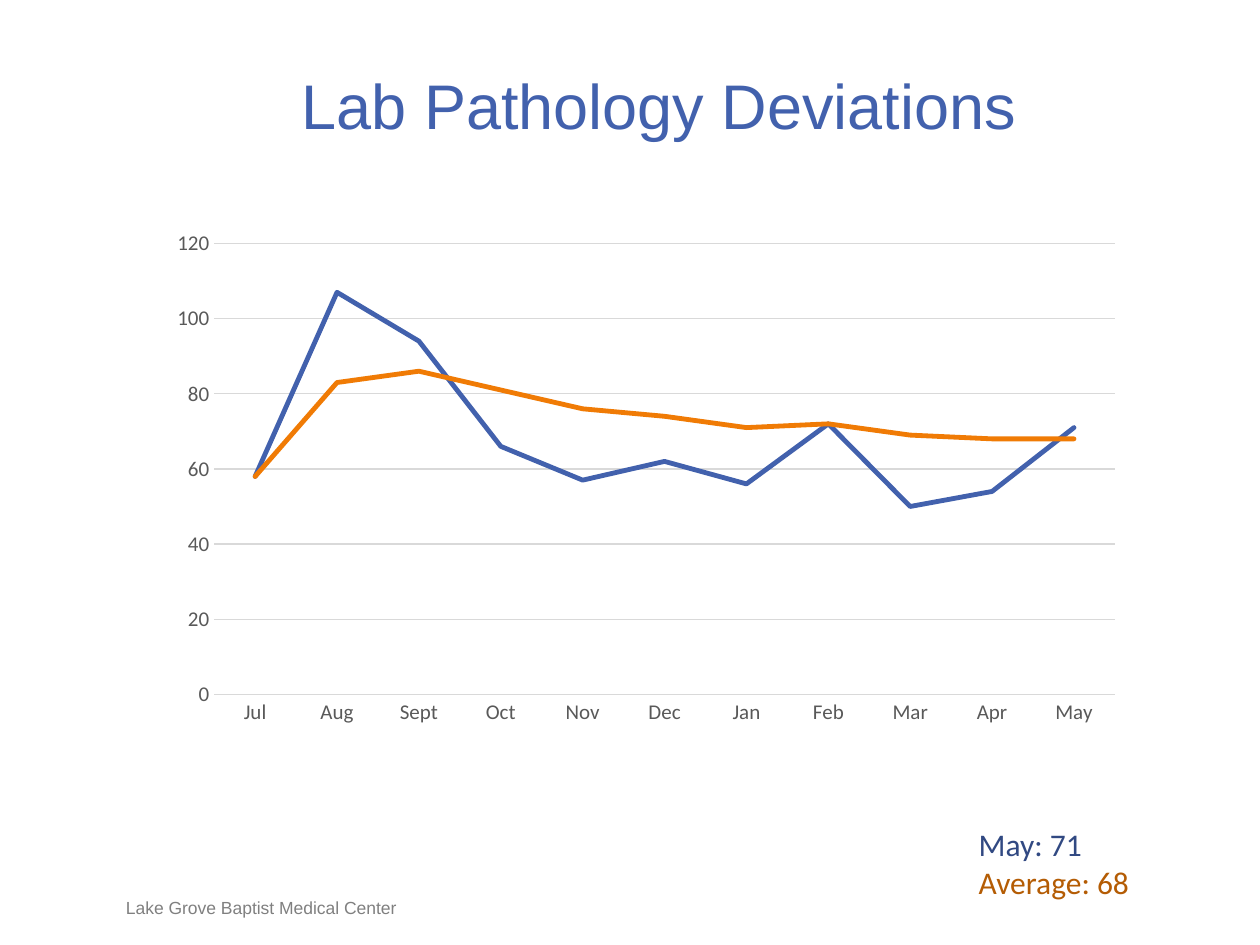
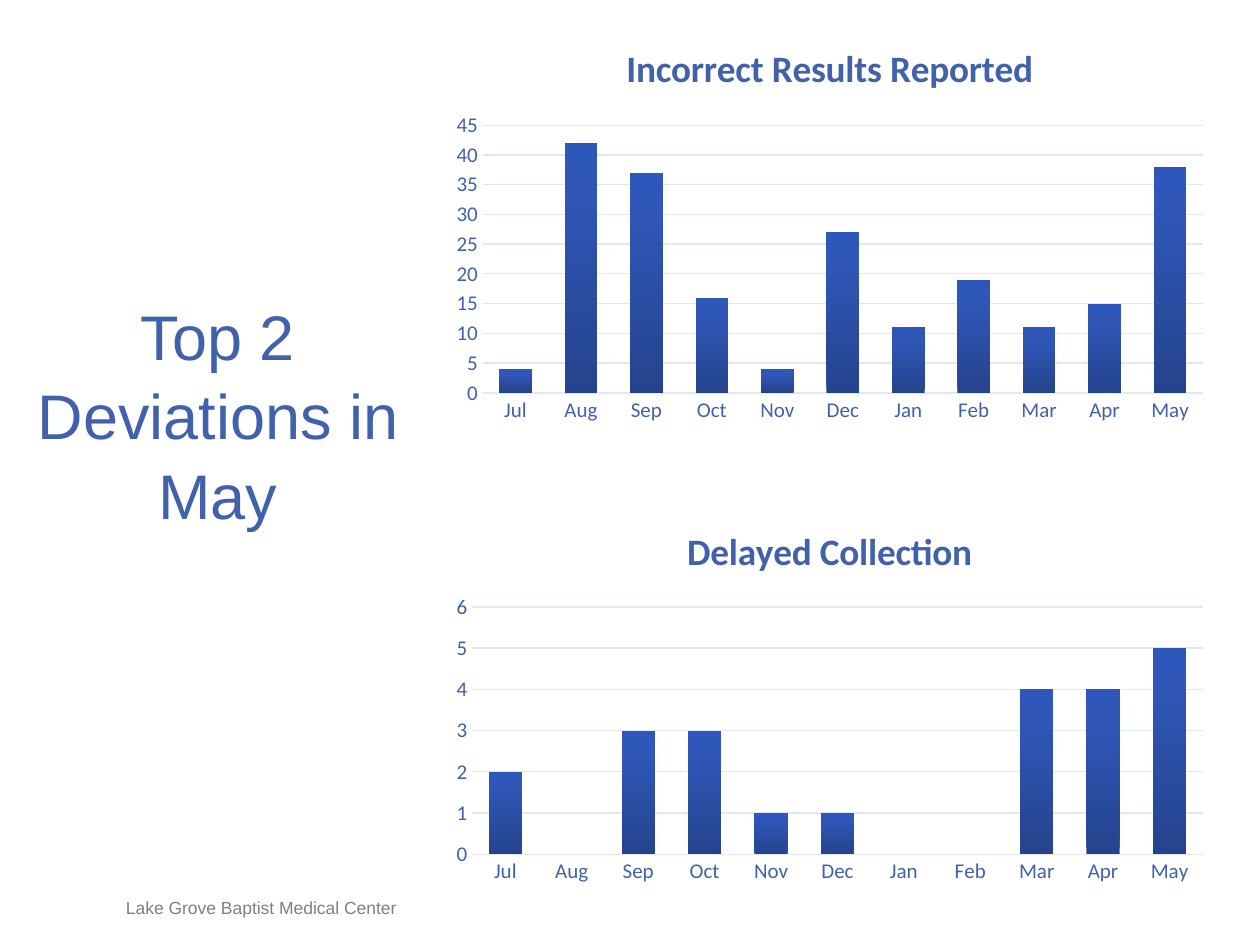
import copy

import pptx
import pptx.chart.data
import pptx.dml.color
import pptx.enum.chart
import pptx.enum.text
import pptx.oxml.ns
import pptx.util

Cm, Pt = pptx.util.Cm, pptx.util.Pt
XL = pptx.enum.chart.XL_CHART_TYPE
ANCHOR = pptx.enum.text.MSO_ANCHOR

BLUE, ORANGE = "4261AD", "F07B05"
FOOTER = "Lake Grove Baptist Medical Center"
MONTHS = ["Jul", "Aug", "Sep", "Oct", "Nov", "Dec", "Jan", "Feb", "Mar", "Apr", "May"]
TREND_MONTHS = ["Sept" if month == "Sep" else month for month in MONTHS]
TREND = [
    ("Series 1", [58, 107, 94, 66, 57, 62, 56, 72, 50, 54, 71], BLUE),
    ("Series 2", [58, 83, 86, 81, 76, 74, 71, 72, 69, 68, 68], ORANGE),
]
SUMMARY = [("May: 71", "314982"), ("Average: 68", "B45C04")]
TOP_DEVIATIONS = [
    ("Incorrect Results Reported", [4, 42, 37, 16, 4, 27, 11, 19, 11, 15, 38], (0.43, 8.26)),
    ("Delayed Collection", [2, None, 3, 3, 1, 1, None, None, 4, 4, 5], (10.16, 7.82)),
]
BAR_GRADIENT = [(0, "25438D"), (0.8, "3057B7"), (1, "2E57BB")]


def rgb(value):
    return pptx.dml.color.RGBColor.from_string(value)


def style_font(font, name, size, color, bold=False):
    font.name, font.size, font.bold = name, Pt(size), bold
    font.color.rgb = rgb(color)


def fit_frame(box, anchor, inset):
    frame = box.text_frame
    frame.word_wrap = True
    frame.auto_size = pptx.enum.text.MSO_AUTO_SIZE.SHAPE_TO_FIT_TEXT
    frame.vertical_anchor = anchor
    if not inset:
        frame.margin_left = frame.margin_right = frame.margin_top = frame.margin_bottom = 0
    return frame


def add_text(page, lines, place, font, size, anchor=ANCHOR.TOP, inset=True):
    box = page.shapes.add_textbox(*map(Cm, place))
    frame = fit_frame(box, anchor, inset)
    for index, (text, color) in enumerate(lines):
        para = frame.add_paragraph() if index else frame.paragraphs[0]
        para.text = text
        style_font(para.font, font, size, color)


def add_page(deck, title, place):
    page = deck.slides.add_slide(deck.slide_layouts[5])
    box = page.shapes.title
    box.left, box.top, box.width, box.height = map(Cm, place)
    para = fit_frame(box, ANCHOR.TOP, False).paragraphs[0]
    para.text = title
    para.alignment = pptx.enum.text.PP_ALIGN.CENTER
    para.line_spacing = 1.05
    style_font(para.font, "Arial", 36, BLUE)
    add_text(page, [(FOOTER, "808080")], (2.54, 18.08, 8.05, 0.43), "Arial", 10,
             ANCHOR.BOTTOM, False)
    return page


def add_chart(page, kind, months, series, place, label_color, grid_color, axis_width):
    data = pptx.chart.data.CategoryChartData()
    data.categories = months
    for name, values in series:
        data.add_series(name, values)
    chart = page.shapes.add_chart(kind, *map(Cm, place), data).chart
    chart.has_legend = chart.has_title = False
    style_font(chart.font, "Calibri", 10, "000000")
    chart.plots[0].vary_by_categories = False
    for axis in (chart.category_axis, chart.value_axis):
        axis.major_tick_mark = axis.minor_tick_mark = pptx.enum.chart.XL_TICK_MARK.NONE
        style_font(axis.tick_labels.font, "Calibri", 12, label_color)
    chart.value_axis.format.line.fill.background()
    chart.value_axis.has_major_gridlines = True
    grid = chart.value_axis.major_gridlines.format.line
    for line, width in ((chart.category_axis.format.line, axis_width), (grid, 0.75)):
        line.color.rgb, line.width = rgb(grid_color), Pt(width)
    return chart


def add_trend_chart(page):
    series = [(name, values) for name, values, color in TREND]
    chart = add_chart(page, XL.LINE, TREND_MONTHS, series, (3.18, 4.45, 19.69, 10.36),
                      "595959", "D9D9D9", 1)
    for curve, (name, values, color) in zip(chart.plots[0].series, TREND):
        curve.smooth = False
        curve.marker.style = pptx.enum.chart.XL_MARKER_STYLE.NONE
        line = curve.format.line
        line.color.rgb, line.width = rgb(color), Pt(2.75)
        line_xml = curve._element.find(".//" + pptx.oxml.ns.qn("a:ln"))
        line_xml.set("cap", "rnd")


def add_deviation_chart(page, name, values, top, height):
    chart = add_chart(page, XL.COLUMN_CLUSTERED, MONTHS, [(name, values)],
                      (8.89, top, 15.67, height), BLUE, "E2E7F4", 0.75)
    chart.has_title = True
    para = chart.chart_title.text_frame.paragraphs[0]
    para.text = name
    style_font(para.font, "Calibri", 21.3, BLUE, True)
    chart.chart_title.include_in_layout = False
    plot = chart.plots[0]
    plot.gap_width, plot.overlap = 100, -24
    bars = plot.series[0]
    bars.invert_if_negative = False
    fill = bars.format.fill
    fill.gradient()
    fill.gradient_angle = 90
    stops = bars._element.find(".//" + pptx.oxml.ns.qn("a:gsLst"))
    stops.append(copy.deepcopy(stops[-1]))
    for stop, (position, color) in zip(fill.gradient_stops, BAR_GRADIENT):
        stop.position = position
        stop.color.rgb = rgb(color)


def main():
    deck = pptx.Presentation()
    deck.slide_width, deck.slide_height = Cm(25.4), Cm(19.05)

    page = add_page(deck, "Lab Pathology Deviations", (2.49, 1.27, 21.59, 1.55))
    add_text(page, SUMMARY, (19.48, 16.51, 5.08, 1.8), "Calibri", 18)
    add_trend_chart(page)

    page = add_page(deck, "Top 2 Deviations in May", (0.05, 5.92, 8.69, 1.55))
    for name, values, (top, height) in TOP_DEVIATIONS:
        add_deviation_chart(page, name, values, top, height)

    deck.save("out.pptx")


if __name__ == "__main__":
    main()
